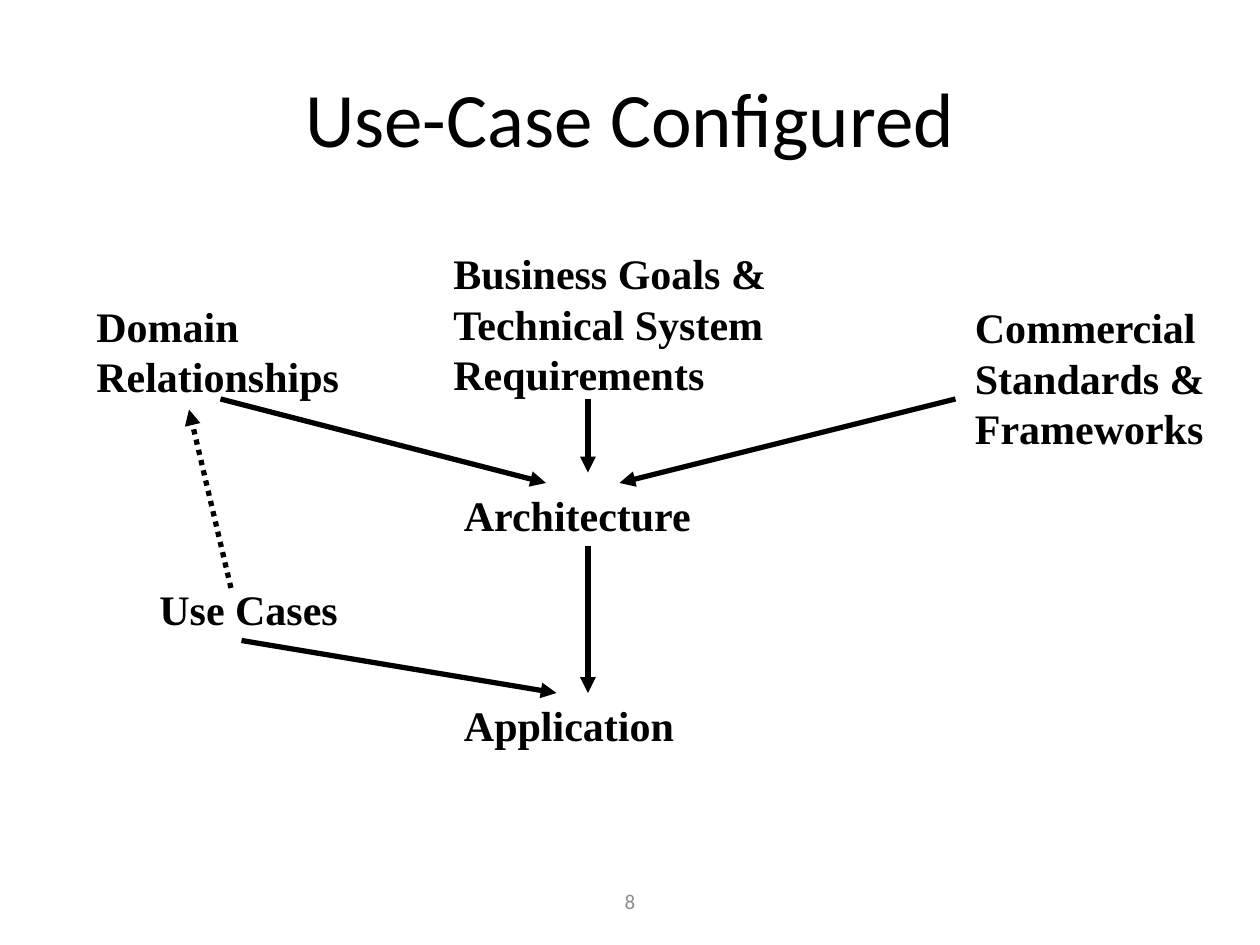
from dataclasses import dataclass

from lxml import etree
from pptx import Presentation, util as u
from pptx.dml.color import RGBColor
from pptx.enum import dml, text
from pptx.enum.shapes import MSO_CONNECTOR
from pptx.oxml.ns import qn

BLACK = RGBColor(0x00, 0x00, 0x00)
GREY = RGBColor(0x8C, 0x8C, 0x8C)

TITLE_FONT = {"name": "Calibri", "size": u.Pt(44), "color": BLACK}
LABEL_FONT = {"name": "Times New Roman", "size": u.Pt(24), "bold": True, "color": BLACK}
NUMBER_FONT = {"name": "Calibri", "size": u.Pt(12), "color": GREY}

LABEL_FRAME = {"word_wrap": False, "auto_size": text.MSO_AUTO_SIZE.SHAPE_TO_FIT_TEXT}
CENTRED_FRAME = {
    "word_wrap": True,
    "auto_size": text.MSO_AUTO_SIZE.NONE,
    "vertical_anchor": text.MSO_ANCHOR.MIDDLE,
}


@dataclass(frozen=True)
class Label:
    """A text with its box in points; \\v breaks a line, \\n a paragraph."""
    wording: str
    left: float
    top: float
    width: float
    height: float


@dataclass(frozen=True)
class Arrow:
    start: tuple[float, float]
    end: tuple[float, float]
    dotted: bool = False


TITLE = Label("Use-Case Configured", 36, 21.6, 648, 90)
PAGE_NUMBER = Label("8", 246, 500.5, 228, 28.75)

LABELS = [
    Label("Architecture", 258, 276, 144.5, 36),
    Label("Application", 258, 396, 134.5, 36),
    Label("Use Cases", 84, 330, 116.5, 36),
    Label("Domain\nRelationships", 48, 168, 153, 65),
    Label("Business Goals &\vTechnical System\nRequirements", 252, 138, 193.5, 94),
    Label("Commercial\vStandards &\nFrameworks", 550, 169, 146, 94),
]

ARROWS = [
    Arrow((126, 228), (312, 276)),
    Arrow((336, 228), (336, 270)),
    Arrow((546, 228), (354, 276)),
    Arrow((336, 312), (336, 396)),
    Arrow((138, 366), (318, 396)),
    Arrow((132, 336), (108, 234), dotted=True),
]


def set_values(target, values: dict) -> None:
    for name, value in values.items():
        setattr(target, name, value)


def fill_text(box, wording: str, frame_values: dict, font_values: dict, align) -> None:
    frame = box.text_frame
    frame.text = wording
    set_values(frame, frame_values)
    for para in frame.paragraphs:
        para.alignment = align
        for span in para.runs:
            for name, value in font_values.items():
                if name == "color":
                    span.font.color.rgb = value
                else:
                    setattr(span.font, name, value)


def add_label(page, label: Label, frame_values: dict, font_values: dict, align) -> None:
    box = page.shapes.add_textbox(
        *map(u.Pt, (label.left, label.top, label.width, label.height))
    )
    fill_text(box, label.wording, frame_values, font_values, align)


def add_title(page, label: Label) -> None:
    title = page.shapes.title
    for side in ("left", "top", "width", "height"):
        setattr(title, side, u.Pt(getattr(label, side)))
    fill_text(title, label.wording, CENTRED_FRAME, TITLE_FONT, text.PP_ALIGN.CENTER)


def add_arrow(page, arrow: Arrow) -> None:
    connector = page.shapes.add_connector(
        MSO_CONNECTOR.STRAIGHT, *map(u.Pt, arrow.start + arrow.end)
    )
    line = connector.line
    line.width = u.Pt(3)
    line.color.rgb = BLACK
    if arrow.dotted:
        line.dash_style = dml.MSO_LINE.ROUND_DOT
    properties = connector.element.spPr
    outline = properties.find(qn("a:ln"))
    etree.SubElement(outline, qn("a:tailEnd"), type="triangle")
    etree.SubElement(properties, qn("a:effectLst"))


def main() -> None:
    deck = Presentation()
    deck.slide_width, deck.slide_height = u.Pt(720), u.Pt(540)
    page = deck.slides.add_slide(deck.slide_layouts[5])
    add_title(page, TITLE)
    add_label(page, PAGE_NUMBER, CENTRED_FRAME, NUMBER_FONT, text.PP_ALIGN.CENTER)
    for label in LABELS:
        add_label(page, label, LABEL_FRAME, LABEL_FONT, text.PP_ALIGN.LEFT)
    for arrow in ARROWS:
        add_arrow(page, arrow)
    deck.save("out.pptx")


if __name__ == "__main__":
    main()
